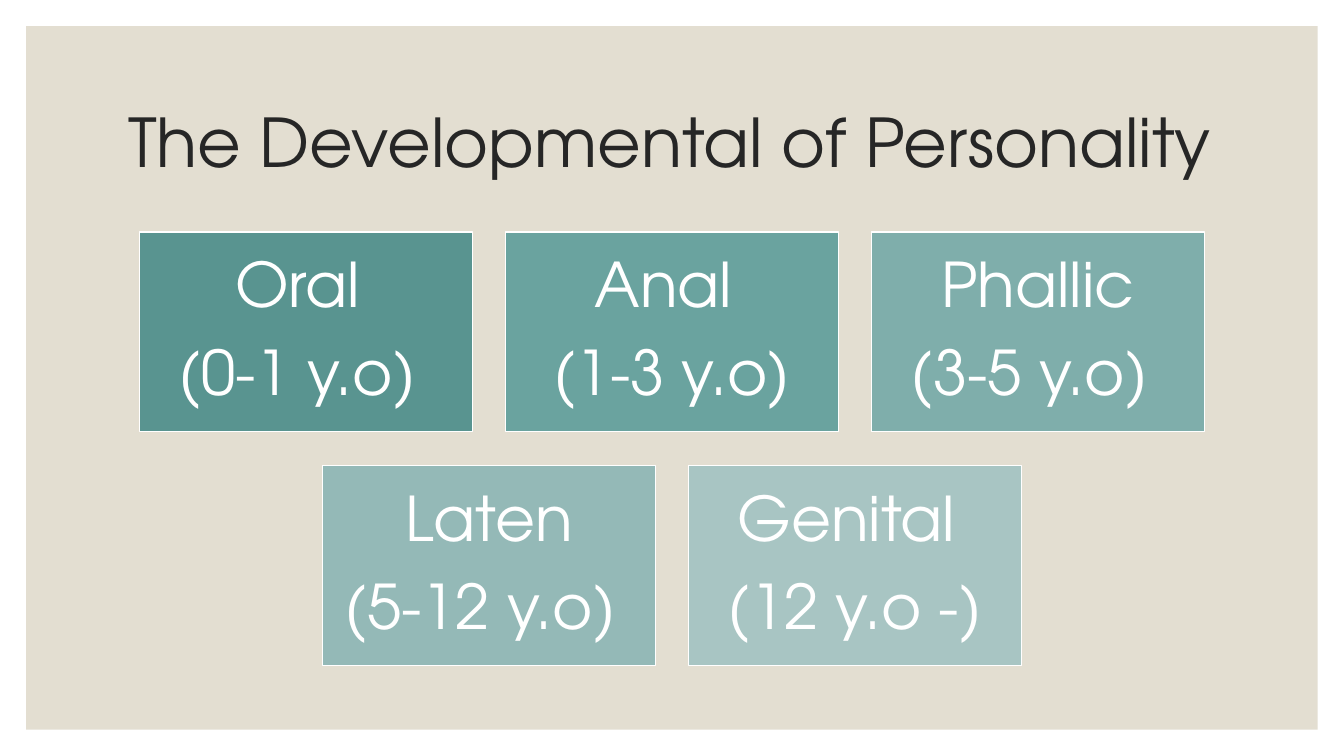
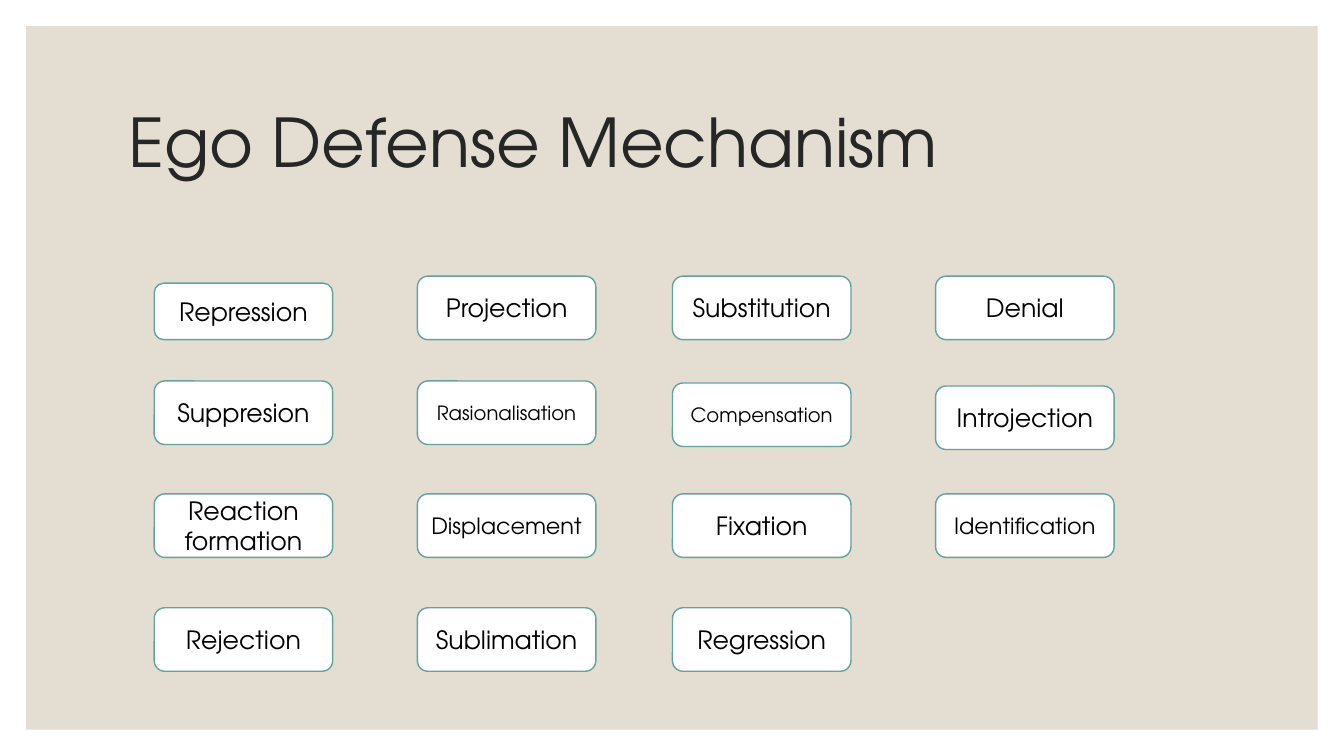
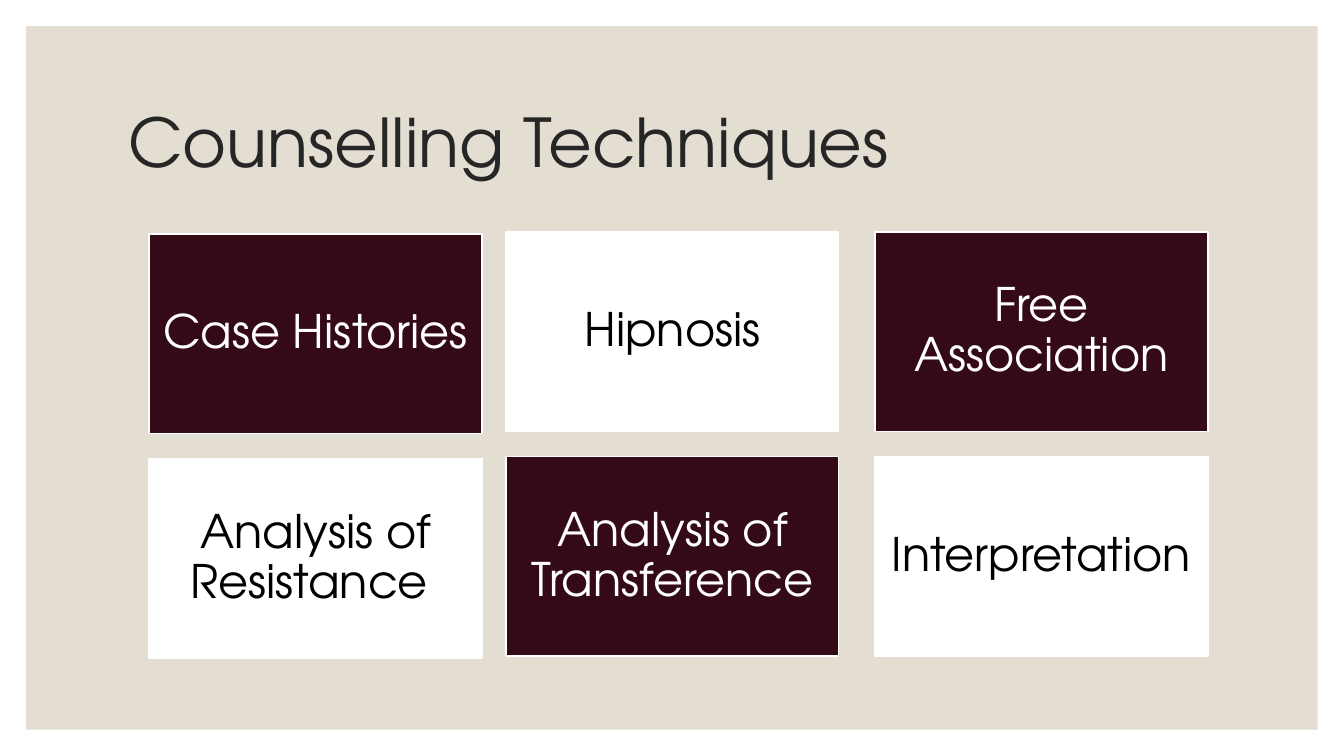
import pptx
import pptx.dml.color
import pptx.enum.shapes
import pptx.enum.text
import pptx.util

Inches = pptx.util.Inches
Pt = pptx.util.Pt
SHAPES = pptx.enum.shapes.MSO_SHAPE
ALIGN = pptx.enum.text.PP_ALIGN

FONT = "TeX Gyre Adventor"
WHITE, BLACK, INK = "FFFFFF", "000000", "262626"
SAND, TEAL, WINE = "E3DED1", "62A39F", "340A17"
PAGE_WIDTH, PAGE_HEIGHT = 13.33, 7.5
BORDER = 0.26
TILE_WIDTH, TILE_HEIGHT = 3.3, 1.98


def colour(value):
    return pptx.dml.color.RGBColor.from_string(value)


def write(box, lines, size, ink, align=ALIGN.CENTER, spacing=1.0, after=0, inset=None):
    """Put one paragraph per line into the box, centred vertically."""
    frame = box.text_frame
    frame.word_wrap = True
    frame.vertical_anchor = pptx.enum.text.MSO_ANCHOR.MIDDLE
    if inset is not None:
        frame.margin_left = frame.margin_right = Inches(inset)
        frame.margin_top = frame.margin_bottom = Inches(inset)
    for index, line in enumerate(lines):
        para = frame.add_paragraph() if index else frame.paragraphs[0]
        para.alignment = align
        para.line_spacing = spacing
        para.space_before = Pt(0)
        para.space_after = Pt(after)
        span = para.add_run()
        span.text = line
        span.font.name = FONT
        span.font.size = Pt(size)
        span.font.color.rgb = colour(ink)


def add_box(page, kind, left, top, width, height, fill, line=None):
    box = page.shapes.add_shape(
        kind, Inches(left), Inches(top), Inches(width), Inches(height))
    box.shadow.inherit = False
    box.fill.solid()
    box.fill.fore_color.rgb = colour(fill)
    if line:
        box.line.color.rgb = colour(line)
        box.line.width = Pt(1)
    else:
        box.line.fill.background()
    return box


def add_tile(page, left, top, fill, lines, **text_format):
    tile = add_box(page, SHAPES.RECTANGLE, left, top, TILE_WIDTH, TILE_HEIGHT, fill, WHITE)
    write(tile, lines, spacing=0.9, **text_format)


def prepare_layout(deck):
    """Give the title-only layout its sand panel and title position."""
    layout = deck.slide_layouts.get_by_name("Title Only")
    title = layout.placeholders[0]
    title.left, title.top = Inches(1.17), Inches(0.7)
    title.width, title.height = Inches(11), Inches(1.5)
    return layout


def add_panel(page, layout):
    """Draw the panel and move it behind everything on the layout."""
    panel = add_box(page, SHAPES.RECTANGLE, BORDER, BORDER,
                    PAGE_WIDTH - 2 * BORDER, PAGE_HEIGHT - 2 * BORDER, SAND)
    layout.shapes.element.insert(2, panel.element)


def add_page(deck, layout, title):
    page = deck.slides.add_slide(layout)
    write(page.shapes.title, [title], 48, INK, align=ALIGN.LEFT, spacing=0.9)
    return page


def add_stages(page, top, rows, gap=0.33, pitch=2.32):
    """Stack rows of tiles, each row centred on the page."""
    for row_index, row in enumerate(rows):
        row_width = len(row) * (TILE_WIDTH + gap) - gap
        start = (PAGE_WIDTH - row_width) / 2
        for index, (name, age, fill) in enumerate(row):
            add_tile(page, start + index * (TILE_WIDTH + gap), top + row_index * pitch,
                     fill, [name, age], size=44, ink=WHITE, after=15, inset=0.18)


def add_mechanisms(page, columns, height=0.63):
    for left, labels in columns.items():
        for name, size, top in labels:
            # The first row shares a bottom edge at 3.37.
            tall = min(height, 3.37 - top) if top < 3 else height
            label = add_box(page, SHAPES.ROUNDED_RECTANGLE, left, top, 1.77, tall, WHITE, TEAL)
            write(label, [name], size, BLACK)


def add_techniques(page, top, columns, pitch=2.23):
    """Fill columns of tiles in alternating dark and light."""
    for column, (left, drop, names) in enumerate(columns):
        for row, name in enumerate(names):
            fill, ink = [(WINE, WHITE), (WHITE, BLACK)][(column + row) % 2]
            add_tile(page, left, top + drop + row * pitch, fill, [name],
                     size=33, ink=ink, after=11.5, inset=0.13)


def main():
    deck = pptx.Presentation()
    deck.slide_width, deck.slide_height = Inches(PAGE_WIDTH), Inches(PAGE_HEIGHT)
    layout = prepare_layout(deck)

    page = add_page(deck, layout, "The Developmental of Personality")
    add_panel(page, layout)
    add_stages(page, 2.3, [
        [("Oral ", "(0-1 y.o) ", "599490"),
         ("Anal ", "(1-3 y.o)", "6AA39F"),
         ("Phallic", "(3-5 y.o) ", "7FAEAB")],
        [("Laten", "(5-12 y.o) ", "94B9B7"),
         ("Genital ", "(12 y.o -)", "A8C5C3")],
    ])

    page = add_page(deck, layout, "Ego Defense Mechanism")
    add_mechanisms(page, {
        1.53: [("Repression", 18, 2.81), ("Suppresion", 18, 3.78),
               ("Reaction formation", 18, 4.9), ("Rejection", 18, 6.03)],
        4.14: [("Projection", 18, 2.74), ("Rasionalisation", 14, 3.78),
               ("Displacement", 16, 4.9), ("Sublimation", 18, 6.03)],
        6.67: [("Substitution", 18, 2.74), ("Compensation", 14, 3.8),
               ("Fixation", 18, 4.9), ("Regression", 18, 6.03)],
        9.28: [("Denial", 18, 2.74), ("Introjection", 18, 3.83),
               ("Identification", 16, 4.9)],
    })

    page = add_page(deck, layout, "Counselling Techniques")
    add_techniques(page, 2.3, [
        (1.48, 0.02, ["Case Histories", "Analysis of Resistance "]),
        (5.02, 0, ["Hipnosis", "Analysis of Transference"]),
        (8.68, 0, ["Free Association", "Interpretation"]),
    ])

    deck.save("out.pptx")


if __name__ == "__main__":
    main()
